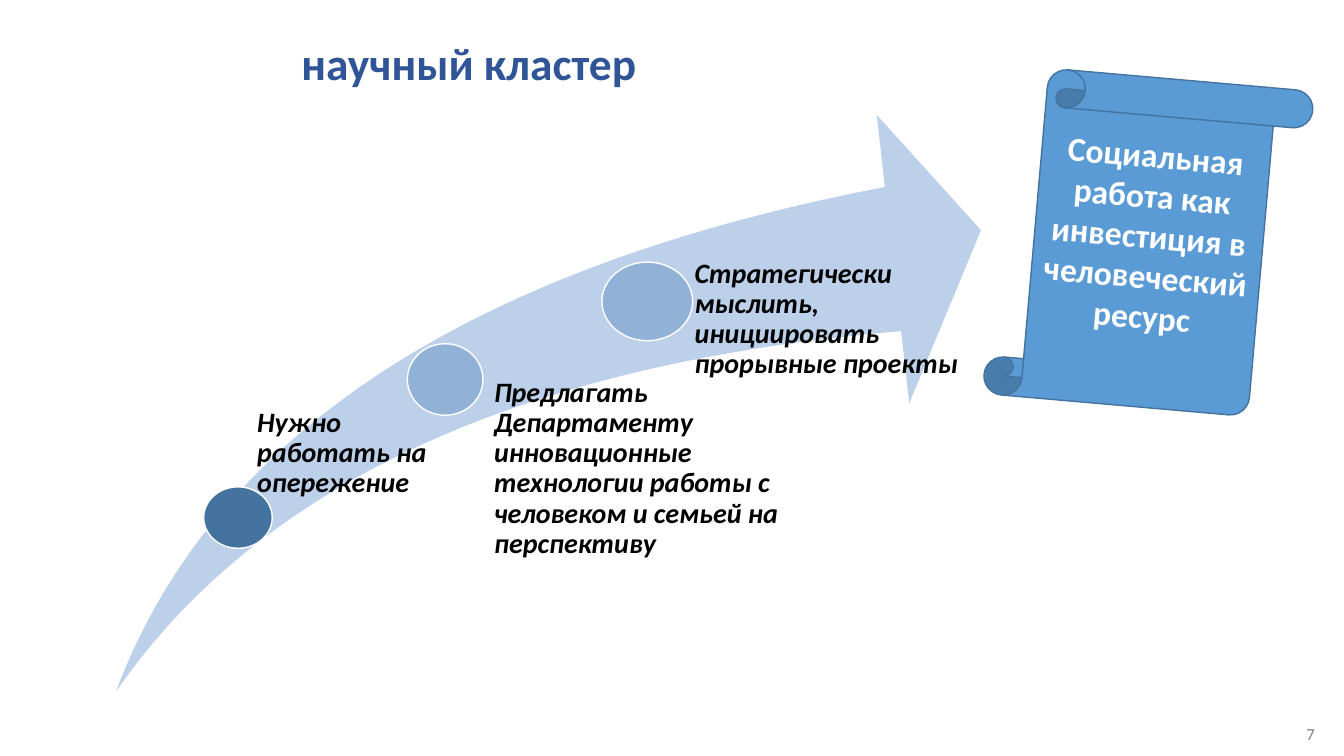
from pptx import Presentation
from pptx.dml.color import RGBColor
from pptx.enum.shapes import MSO_SHAPE
from pptx.enum.text import MSO_ANCHOR, PP_ALIGN
from pptx.util import Inches, Pt

ARROW = MSO_SHAPE.SWOOSH_ARROW
ELLIPSE = MSO_SHAPE.OVAL
SCROLL = MSO_SHAPE.VERTICAL_SCROLL
TOP, MIDDLE = MSO_ANCHOR.TOP, MSO_ANCHOR.MIDDLE
LEFT, CENTER, RIGHT = PP_ALIGN.LEFT, PP_ALIGN.CENTER, PP_ALIGN.RIGHT

FONT = "Calibri"
WHITE = RGBColor(0xFF, 0xFF, 0xFF)
BLACK = RGBColor(0x00, 0x00, 0x00)
GRAY = RGBColor(0x7F, 0x7F, 0x7F)
TITLE_BLUE = RGBColor(0x2F, 0x55, 0x97)
PALE_BLUE = RGBColor(0xBD, 0xD0, 0xE9)
SOFT_BLUE = RGBColor(0x91, 0xB1, 0xD6)
DARK_BLUE = RGBColor(0x43, 0x73, 0x9E)
SCROLL_BLUE = RGBColor(0x5B, 0x9B, 0xD5)

# Each step: circle box, circle colour, label box, label left inset, label
STEPS = [
    ((2.02, 4.83, 0.68, 0.61), DARK_BLUE, (2.34, 4.05, 2.06, 2.92), 0.21,
     "Нужно работать на опережение"),
    ((4.04, 3.41, 0.75, 0.71), SOFT_BLUE, (4.78, 3.75, 3.28, 2.59), 0.12,
     "Предлагать Департаменту инновационные технологии работы с человеком "
     "и семьей на перспективу"),
    ((5.97, 2.6, 0.9, 0.78), SOFT_BLUE, (6.59, 2.57, 3.04, 3.73), 0.3,
     "Стратегически мыслить, инициировать прорывные проекты"),
]


def add_figure(slide, preset, box, fill, line=None):
    shape = slide.shapes.add_shape(preset, *map(Inches, box))
    shape.shadow.inherit = False
    shape.fill.solid()
    shape.fill.fore_color.rgb = fill
    if line is None:
        shape.line.fill.background()
    else:
        shape.line.color.rgb = line
        shape.line.width = Pt(1)
    return shape


def write_text(shape, text, size, color, align=LEFT, anchor=TOP,
               insets=(0.1, 0.05, 0.1, 0.05), spacing=1.0, bold=True, italic=False):
    """Fill a shape with one paragraph; insets are left, top, right, bottom."""
    frame = shape.text_frame
    frame.word_wrap = True
    frame.vertical_anchor = anchor
    (frame.margin_left, frame.margin_top,
     frame.margin_right, frame.margin_bottom) = map(Inches, insets)
    paragraph = frame.paragraphs[0]
    paragraph.alignment = align
    paragraph.line_spacing = spacing
    run = paragraph.add_run()
    run.text = text
    run.font.name = FONT
    run.font.size = Pt(size)
    run.font.bold = bold
    run.font.italic = italic
    run.font.color.rgb = color


def add_text(slide, box, text, size, color, **style):
    write_text(slide.shapes.add_textbox(*map(Inches, box)), text, size, color, **style)


def add_step(slide, circle_box, circle_color, label_box, inset, label):
    add_figure(slide, ELLIPSE, circle_box, circle_color, WHITE)
    add_text(slide, label_box, label, 20, BLACK, insets=(inset, 0, 0, 0),
             spacing=0.9, italic=True)


def add_scroll(slide):
    scroll = add_figure(slide, SCROLL, (9.88, 0.77, 3.02, 3.27), SCROLL_BLUE, DARK_BLUE)
    scroll.rotation = 5
    write_text(scroll, "Социальная работа как инвестиция в человеческий ресурс",
               24, WHITE, align=CENTER, anchor=MIDDLE, insets=(0.1, 0.05, 0.1, 0.38))


def main():
    presentation = Presentation()
    presentation.slide_width = Inches(13.33)
    presentation.slide_height = Inches(7.5)
    slide = presentation.slides.add_slide(presentation.slide_layouts[6])

    add_text(slide, (2.89, 0.36, 8.05, 0.71), "научный кластер", 32.4, TITLE_BLUE,
             spacing=0.9)
    add_figure(slide, ARROW, (1.15, 1.14, 8.58, 5.72), PALE_BLUE)
    for step in STEPS:
        add_step(slide, *step)
    add_scroll(slide)
    add_text(slide, (11.64, 7.12, 1.5, 0.32), "7", 12, GRAY, align=RIGHT,
             anchor=MIDDLE, bold=False)

    presentation.save("out.pptx")


if __name__ == "__main__":
    main()
